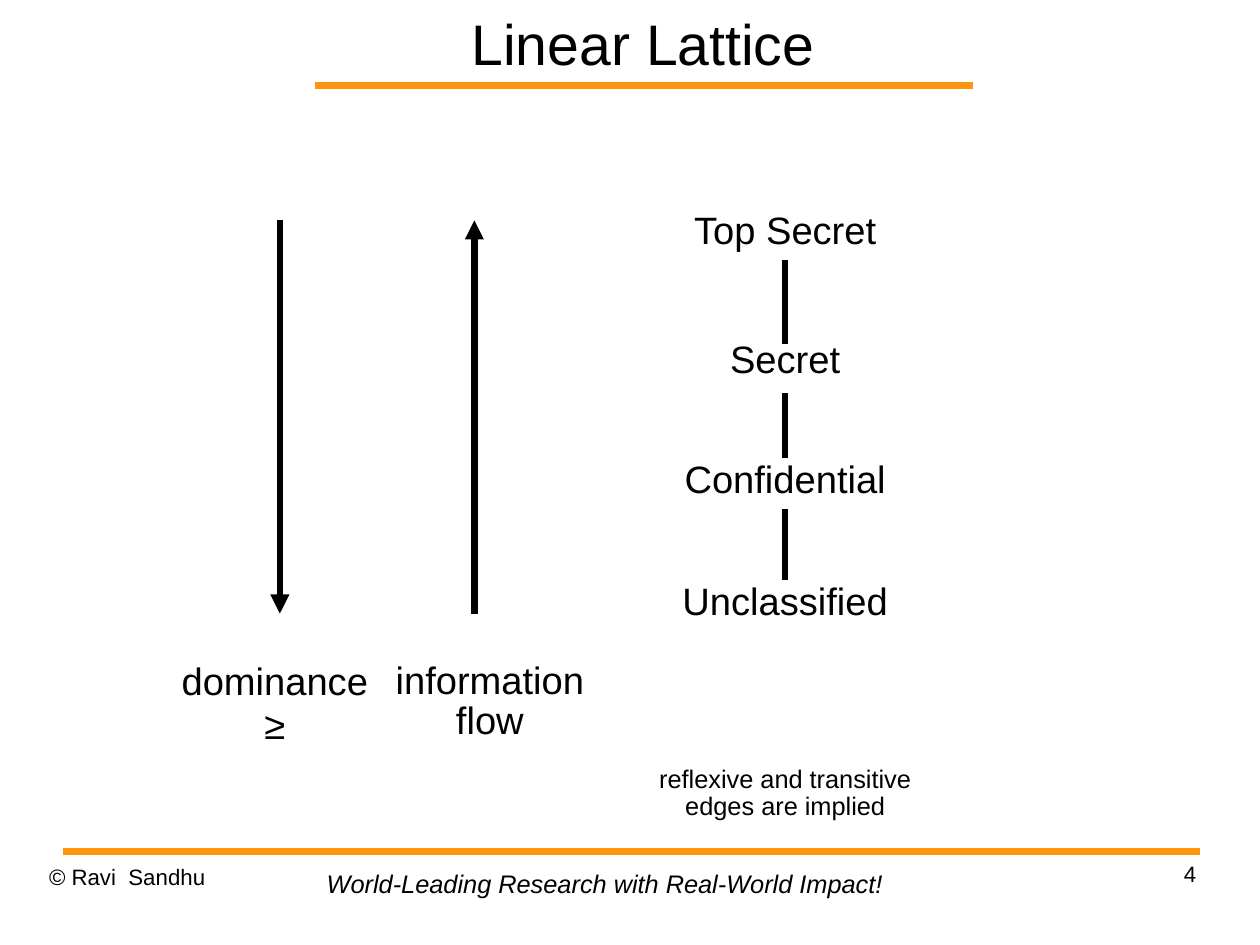
from lxml.etree import SubElement
from pptx import Presentation
from pptx.dml.color import RGBColor
from pptx.enum.shapes import MSO_CONNECTOR
from pptx.enum.text import MSO_ANCHOR, PP_ALIGN
from pptx.oxml.ns import qn
from pptx.util import Pt

WIDE, HIGH = 793.7, 595.28
BLACK, ORANGE = "000000", "FF950E"
LEFT, MID, RIGHT = PP_ALIGN.LEFT, PP_ALIGN.CENTER, PP_ALIGN.RIGHT


def paint(code):
    return RGBColor.from_string(code)


def write(slide, box, text, size=24, align=MID, space=0.87, pad=(5, 2),
          wrap=False, anchor=MSO_ANCHOR.TOP, slant=False):
    """Add a text box; each line of text is a paragraph."""
    shape = slide.shapes.add_textbox(*map(Pt, box))
    frame = shape.text_frame
    frame.word_wrap = wrap
    frame.vertical_anchor = anchor
    frame.margin_left = frame.margin_right = Pt(pad[0])
    frame.margin_top = frame.margin_bottom = Pt(pad[1])
    frame.text = text
    for para in frame.paragraphs:
        para.alignment = align
        para.line_spacing = space
        font = para.font
        font.name, font.size, font.italic = "Arial", Pt(size), slant
        font.color.rgb = paint(BLACK)
    return shape


def rule(slide, start, end, color=BLACK, width=4, arrow=False):
    """Add a straight line, with an arrowhead at its end if asked."""
    line = slide.shapes.add_connector(
        MSO_CONNECTOR.STRAIGHT, *map(Pt, (*start, *end)))
    line.line.color.rgb = paint(color)
    line.line.width = Pt(width)
    if arrow:
        SubElement(line.line._get_or_add_ln(), qn("a:tailEnd"), type="triangle")
    SubElement(line._element.spPr, qn("a:effectLst"))
    return line


def header(slide, box, title):
    x, y, w, h = box
    write(slide, box, title, size=36, space=1, pad=(0, 0), wrap=True,
          anchor=MSO_ANCHOR.MIDDLE)
    rule(slide, (x + 25.2, y + h), (x + 439.2, y + h), ORANGE, 4.31)


def footer(slide, box, owner, motto, number):
    x, y, w, h = box
    rule(slide, (x, y), (x + w, y), ORANGE, 4.31)
    side = dict(size=14, space=1.01, pad=(0, 0), wrap=True)
    write(slide, (x - 8.6, y + 7.2, 185, h), owner, align=LEFT, **side)
    write(slide, (x + w - 187.4, y + 5.8, 185, h), number, align=RIGHT, **side)
    write(slide, (x + 159.2, y + 7.2, 365.8, 26.6), motto, size=16,
          align=LEFT, space=1, pad=(7.2, 3.6), slant=True)


def flows(slide, box):
    """Two opposed arrows with their labels below."""
    x, y, w, h = box
    far = x + w
    rule(slide, (x, y), (x, y + h), arrow=True)
    rule(slide, (far, y + h), (far, y), arrow=True)
    write(slide, (x - 73.4, y + h + 27.2, 140.4, 64), "dominance\n≥", space=0.97)
    write(slide, (far - 55.4, y + h + 28.8, 130.4, 55), "information\nflow")


def chain(slide, box):
    """Levels from high to low, each tied to the one above, and a note."""
    x, y, w, h = box
    mid, tall = x + w / 2, 29.5
    levels = [  # name, width, top, lower and upper end of its tie
        ("Top Secret", 126, 0, None),
        ("Secret", 80, 81.4, (85, 32.2)),
        ("Confidential", 138, 157, (157, 116)),
        ("Unclassified", 141, 233.8, (233.8, 189.2)),
    ]
    for name, wide, top, tie in levels:
        label = write(slide, (mid - wide / 2, y + top, wide, tall), name)
        if tie:
            low, high = tie
            line = rule(slide, (mid, y + low), (mid, y + high))
            if low == top:
                line.begin_connect(label, 0)
    write(slide, (x, y + h - 38, w, 38),
          "reflexive and transitive edges are implied",
          size=16, space=0.88, wrap=True)


def main():
    deck = Presentation()
    deck.slide_width, deck.slide_height = Pt(WIDE), Pt(HIGH)
    slide = deck.slides.add_slide(deck.slide_layouts[6])
    header(slide, (173.5, 0, 463, 54), "Linear Lattice")
    footer(slide, (39.5, 536.2, 716.5, 41), "© Ravi  Sandhu",
           "World-Leading Research with Real-World Impact!", "4")
    flows(slide, (176.3, 138.8, 122.5, 247.7))
    chain(slide, (409.6, 131.7, 170, 387.6))
    deck.save("out.pptx")


if __name__ == "__main__":
    main()
